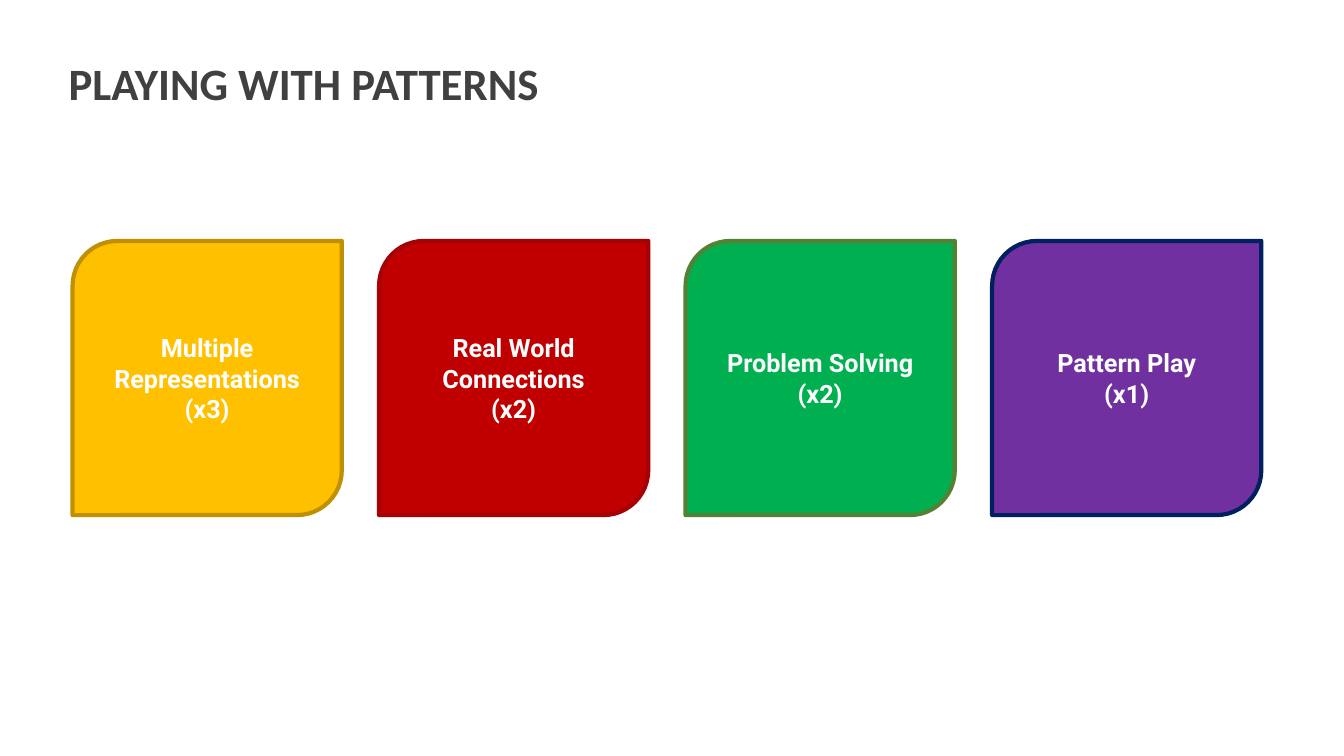
from pptx import Presentation
from pptx import util as u
from pptx.dml.color import RGBColor
from pptx.enum import shapes, text


def tint(code):
    return RGBColor.from_string(code)


def apply(item, values):
    for name, value in values.items():
        setattr(item, name, value)


class Deck:
    wide, high = 13.33, 7.5
    left, top, pitch = 0.72, 2.39, 3.04
    width, height = 2.67, 2.72
    head = {"name": "Calibri", "size": u.Pt(32), "bold": True}
    label = {"name": "Roboto", "size": u.Pt(18), "bold": True}

    def __init__(self):
        self.file = Presentation()
        apply(self.file, {"slide_width": u.Inches(self.wide),
                          "slide_height": u.Inches(self.high)})
        self.slide = self.file.slides.add_slide(self.file.slide_layouts[5])

    def words(self, frame, lines, font, color, form):
        frame.text = "\n".join(lines)
        for para in frame.paragraphs:
            apply(para, form)
            for run in para.runs:
                apply(run.font, font)
                run.font.color.rgb = tint(color)

    def title(self, line):
        box = self.slide.shapes.title
        apply(box, {"left": u.Inches(0.55), "top": u.Inches(0.62),
                    "width": u.Inches(8.76), "height": u.Inches(0.6)})
        frame = box.text_frame
        sides = ("left", "top", "right", "bottom")
        apply(frame, {f"margin_{side}": u.Inches(0.13) for side in sides})
        apply(frame, {"word_wrap": True,
                      "auto_size": text.MSO_AUTO_SIZE.NONE,
                      "vertical_anchor": text.MSO_ANCHOR.BOTTOM})
        self.words(frame, [line], self.head, "404040",
                   {"alignment": text.PP_ALIGN.LEFT, "line_spacing": 0.9})

    def card(self, col, lines, fill, edge):
        box = self.slide.shapes.add_shape(
            shapes.MSO_SHAPE.ROUND_2_DIAG_RECTANGLE,
            u.Inches(self.left + col * self.pitch), u.Inches(self.top),
            u.Inches(self.width), u.Inches(self.height))
        box.shadow.inherit = False
        box.fill.solid()
        box.fill.fore_color.rgb = tint(fill)
        box.line.color.rgb = tint(edge)
        box.line.width = u.Pt(3)
        apply(box.text_frame, {"word_wrap": True,
                               "vertical_anchor": text.MSO_ANCHOR.MIDDLE})
        self.words(box.text_frame, lines, self.label, "FFFFFF",
                   {"alignment": text.PP_ALIGN.CENTER})


def main():
    deck = Deck()
    deck.title("PLAYING WITH PATTERNS")
    cards = [
        (("Multiple Representations", "(x3)"), "FFC000", "BF9000"),
        (("Real World Connections", "(x2)"), "C00000", "A60205"),
        (("Problem Solving", "(x2)"), "00B050", "548235"),
        (("Pattern Play", "(x1)"), "7030A0", "002060"),
    ]
    for col, card in enumerate(cards):
        deck.card(col, *card)
    deck.file.save("out.pptx")


if __name__ == "__main__":
    main()
